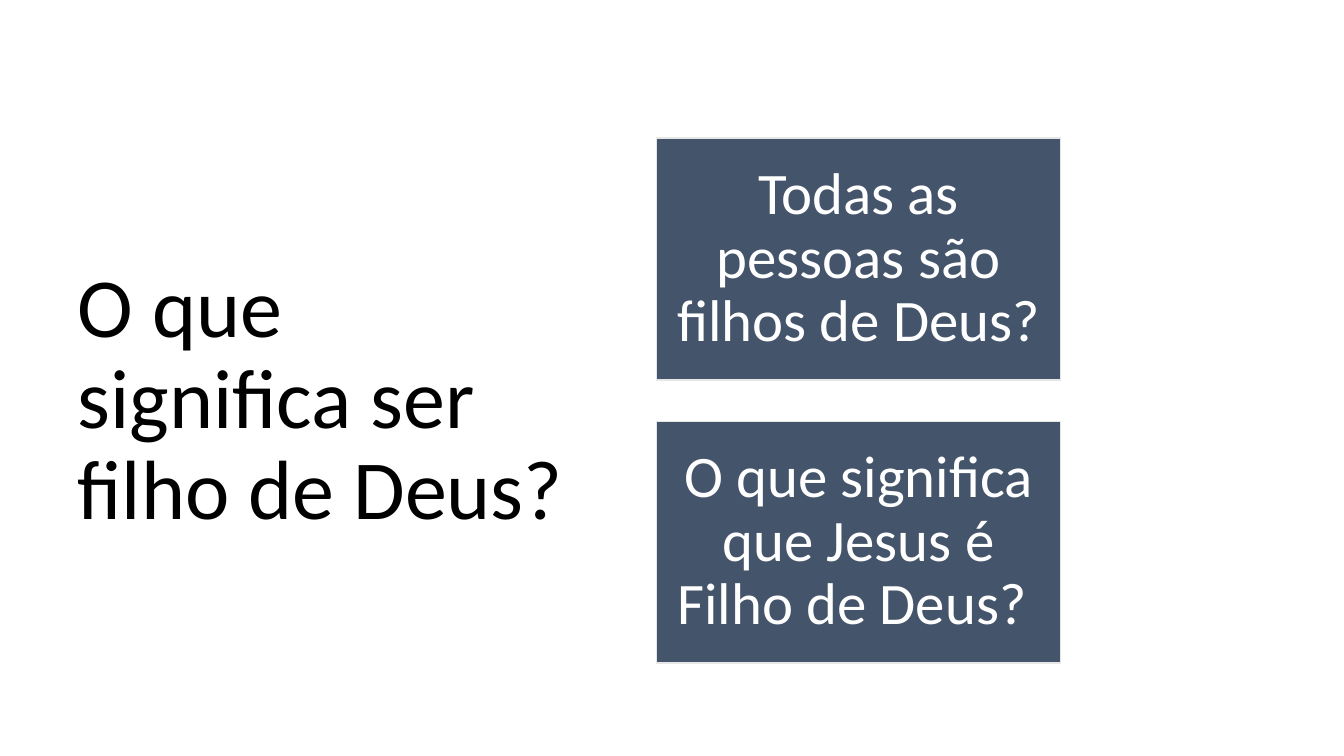
from dataclasses import dataclass

from pptx import Presentation
from pptx.dml.color import RGBColor
from pptx.enum.shapes import MSO_SHAPE
from pptx.enum.text import MSO_ANCHOR, PP_ALIGN
from pptx.slide import Slide
from pptx.text.text import TextFrame
from pptx.util import Inches, Pt

RECT = MSO_SHAPE.RECTANGLE
MIDDLE = MSO_ANCHOR.MIDDLE
LEFT, CENTER = PP_ALIGN.LEFT, PP_ALIGN.CENTER

BLACK = RGBColor(0x00, 0x00, 0x00)
WHITE = RGBColor(0xFF, 0xFF, 0xFF)
SLATE = RGBColor(0x44, 0x54, 0x6A)
PALE = RGBColor(0xE7, 0xE6, 0xE6)

FONT = "Calibri"
TOP = 1.37
STEP = 2.81  # card height plus gap
INSET = Inches(0.17)


@dataclass
class Card:
    text: str
    top: float


def write(frame: TextFrame, text: str, size: int, color: RGBColor,
          align: PP_ALIGN) -> None:
    frame.word_wrap = True
    frame.vertical_anchor = MIDDLE
    para = frame.paragraphs[0]
    para.text = text
    para.alignment = align
    para.line_spacing = 0.9
    para.font.name = FONT
    para.font.size = Pt(size)
    para.font.color.rgb = color


def draw_title(slide: Slide, text: str) -> None:
    box = slide.shapes.add_textbox(
        Inches(0.67), Inches(TOP), Inches(5.04), Inches(5.22))
    write(box.text_frame, text, 60, BLACK, LEFT)


def draw_card(slide: Slide, card: Card) -> None:
    box = slide.shapes.add_shape(
        RECT, Inches(6.51), Inches(card.top), Inches(4.01), Inches(2.4))
    box.shadow.inherit = False
    box.fill.solid()
    box.fill.fore_color.rgb = SLATE
    box.line.color.rgb = PALE
    box.line.width = Pt(1)
    frame = box.text_frame
    frame.margin_left = frame.margin_right = INSET
    frame.margin_top = frame.margin_bottom = INSET
    write(frame, card.text, 42, WHITE, CENTER)


def main() -> None:
    deck = Presentation()
    deck.slide_width = Inches(13.33)
    deck.slide_height = Inches(7.5)
    slide = deck.slides.add_slide(deck.slide_layouts[6])

    # Main question on the left
    draw_title(slide, "O que significa ser filho de Deus?")

    # Stacked question cards on the right
    asks = ("Todas as pessoas são filhos de Deus? ",
            "O que significa que Jesus é Filho de Deus? ")
    for row, text in enumerate(asks):
        draw_card(slide, Card(text, TOP + row * STEP))

    deck.save("out.pptx")


if __name__ == "__main__":
    main()
